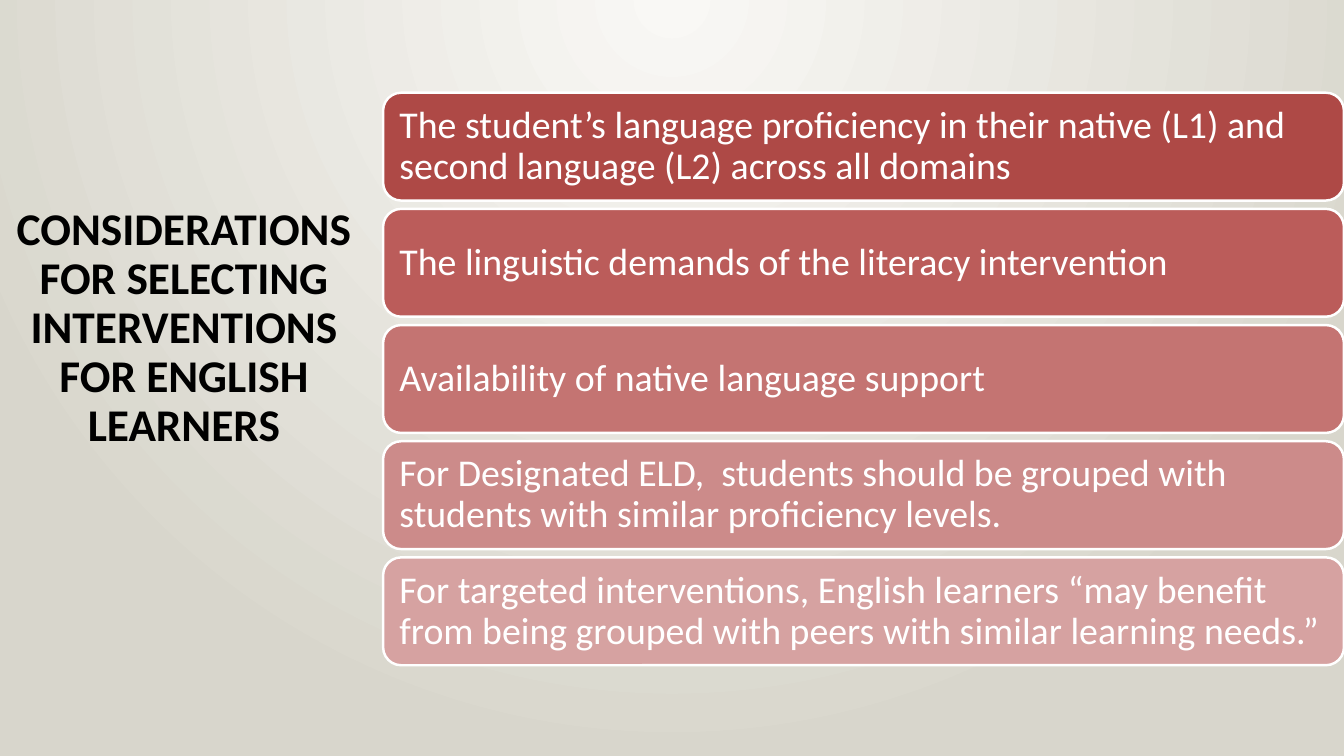
"""Build a slide listing considerations for selecting interventions for English learners."""
from dataclasses import dataclass

from lxml.etree import SubElement
from pptx import Presentation
from pptx.dml.color import RGBColor
from pptx.enum.shapes import MSO_SHAPE
from pptx.enum.text import MSO_ANCHOR, PP_ALIGN
from pptx.oxml.ns import qn
from pptx.slide import Slide
from pptx.text.text import TextFrame
from pptx.util import Inches, Pt

SLIDE_WIDTH = Inches(13.33)
SLIDE_HEIGHT = Inches(7.5)
FONT_NAME = "Calibri"

BLACK = RGBColor(0x00, 0x00, 0x00)
WHITE = RGBColor(0xFF, 0xFF, 0xFF)
GLOW = RGBColor(0xF9, 0xF8, 0xF5)
STONE = RGBColor(0xD8, 0xD6, 0xCC)
RED_1 = RGBColor(0xAE, 0x49, 0x46)
RED_2 = RGBColor(0xBB, 0x5C, 0x5A)
RED_3 = RGBColor(0xC4, 0x74, 0x72)
RED_4 = RGBColor(0xCC, 0x8B, 0x8A)
RED_5 = RGBColor(0xD6, 0xA2, 0xA1)

BAR_LEFT = Inches(3.8)
BAR_WIDTH = SLIDE_WIDTH - BAR_LEFT
BAR_TOP = Inches(0.92)
BAR_HEIGHT = Inches(1.07)
BAR_PITCH = Inches(1.1525)
BAR_INSET = Inches(0.11)


@dataclass(frozen=True)
class Consideration:
    text: str
    fill: RGBColor


TITLE = "CONSIDERATIONS FOR SELECTING INTERVENTIONS FOR ENGLISH LEARNERS"
CONSIDERATIONS = [
    Consideration(
        "The student’s language proficiency in their native (L1) and "
        "second language (L2) across all domains", RED_1),
    Consideration("The linguistic demands of the literacy intervention", RED_2),
    Consideration("Availability of native language support", RED_3),
    Consideration(
        "For Designated ELD,  students should be grouped with "
        "students with similar proficiency levels.", RED_4),
    Consideration(
        "For targeted interventions, English learners “may benefit "
        "from being grouped with peers with similar learning needs.”", RED_5),
]


def paint_background(slide: Slide) -> None:
    fill = slide.background.fill
    fill.gradient()
    for stop, color, position in zip(fill.gradient_stops, (GLOW, STONE), (0, 1)):
        stop.color.rgb = color
        stop.position = position
    gradient = next(slide.element.iter(qn("a:gradFill")))
    linear = gradient.find(qn("a:lin"))
    if linear is not None:
        gradient.remove(linear)
    circle = SubElement(gradient, qn("a:path"), path="circle")
    SubElement(circle, qn("a:fillToRect"), l="43000", t="0", r="43000", b="100000")


def write_text(frame: TextFrame, text: str, size: float, color: RGBColor,
               alignment: PP_ALIGN, bold: bool = False) -> None:
    frame.word_wrap = True
    paragraph = frame.paragraphs[0]
    paragraph.text = text
    paragraph.alignment = alignment
    paragraph.line_spacing = 0.9
    paragraph.font.name = FONT_NAME
    paragraph.font.size = Pt(size)
    paragraph.font.bold = bold
    paragraph.font.color.rgb = color


def add_title(slide: Slide) -> None:
    box = slide.shapes.add_textbox(0, Inches(2), Inches(3.65), Inches(2.68))
    write_text(box.text_frame, TITLE, 32.4, BLACK, PP_ALIGN.CENTER, bold=True)


def add_bar(slide: Slide, row: int, consideration: Consideration) -> None:
    shape = slide.shapes.add_shape(
        MSO_SHAPE.ROUNDED_RECTANGLE,
        BAR_LEFT, BAR_TOP + row * BAR_PITCH, BAR_WIDTH, BAR_HEIGHT)
    shape.shadow.inherit = False
    shape.fill.solid()
    shape.fill.fore_color.rgb = consideration.fill
    shape.line.color.rgb = WHITE
    shape.line.width = Pt(1.75)
    frame = shape.text_frame
    frame.vertical_anchor = MSO_ANCHOR.MIDDLE
    frame.margin_left = frame.margin_right = BAR_INSET
    frame.margin_top = frame.margin_bottom = BAR_INSET
    write_text(frame, consideration.text, 27, WHITE, PP_ALIGN.LEFT)


def main() -> None:
    presentation = Presentation()
    presentation.slide_width = SLIDE_WIDTH
    presentation.slide_height = SLIDE_HEIGHT
    slide = presentation.slides.add_slide(presentation.slide_layouts[6])
    paint_background(slide)
    add_title(slide)
    for row, consideration in enumerate(CONSIDERATIONS):
        add_bar(slide, row, consideration)
    presentation.save("out.pptx")


if __name__ == "__main__":
    main()
